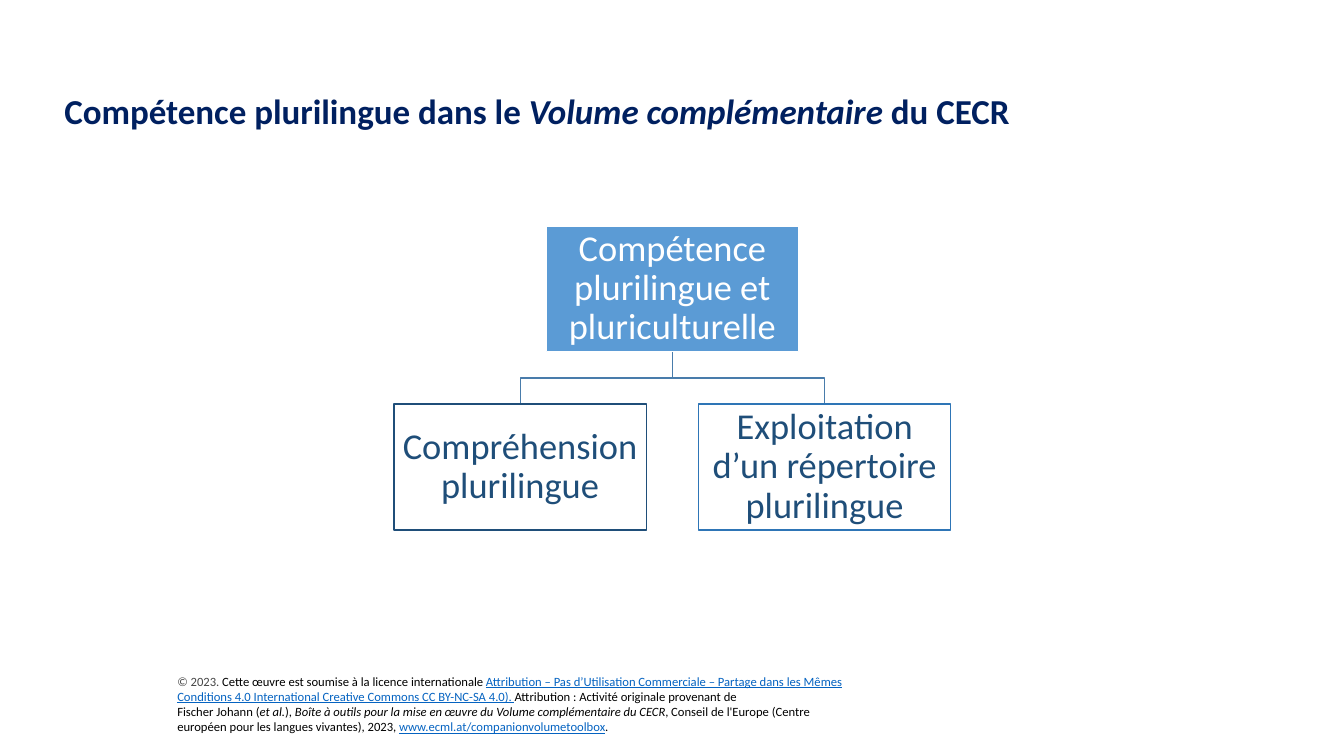
from dataclasses import dataclass

from pptx import Presentation
from pptx.dml.color import RGBColor
from pptx.enum import shapes, text
from pptx.util import Inches, Pt


@dataclass(frozen=True)
class Theme:
    font: str = "Calibri"
    navy: str = "002060"
    black: str = "000000"
    grey: str = "464646"
    link: str = "0563C1"
    white: str = "FFFFFF"
    blue: str = "5B9BD5"
    mid_blue: str = "2E75B6"
    dark_blue: str = "1F4E79"
    branch: str = "497CAB"
    title_size: int = 25
    box_size: int = 26
    licence_size: int = 9


THEME = Theme()
BOX_W, BOX_H = 2.5, 1.25
ROOT_X, ROOT_Y = 5.42, 2.24
CHILD_Y = 4.01
CENTRE_X = ROOT_X + BOX_W / 2
CHILD_OFFSET = 1.51

CHILDREN = [
    (-CHILD_OFFSET, "Compréhension plurilingue", THEME.dark_blue),
    (CHILD_OFFSET, "Exploitation d’un répertoire plurilingue", THEME.mid_blue),
]

TITLE = [[
    ("Compétence plurilingue dans le ", THEME.navy, False),
    ("Volume complémentaire", THEME.navy, True),
    (" du CECR", THEME.navy, False),
]]

LICENCE = [
    [
        ("© 2023. ", THEME.grey, False),
        ("Cette œuvre est soumise à la licence internationale ", THEME.black, False),
        ("Attribution – Pas d’Utilisation Commerciale – Partage dans les Mêmes "
         "Conditions 4.0 International Creative Commons CC BY-NC-SA 4.0). ", THEME.link, False),
        ("Attribution : Activité originale provenant de", THEME.black, False),
    ],
    [
        ("Fischer Johann (", THEME.black, False),
        ("et al.", THEME.black, True),
        ("), ", THEME.black, False),
        ("Boîte à outils pour la mise en œuvre du Volume complémentaire du CECR",
         THEME.black, True),
        (", Conseil de l'Europe (Centre européen pour les langues vivantes), 2023, ",
         THEME.black, False),
        ("www.ecml.at/companionvolumetoolbox", THEME.link, False),
        (".", THEME.black, False),
    ],
]


def rgb(colour):
    return RGBColor.from_string(colour)


def style_font(font, size, colour):
    font.name = THEME.font
    font.size = Pt(size)
    font.color.rgb = rgb(colour)


def add_rich_text(s, left, top, width, height, paragraphs, size, bold=False, spacing=1.0):
    """Add a text box from paragraphs of (text, colour, italic) runs."""
    tf = s.shapes.add_textbox(
        Inches(left), Inches(top), Inches(width), Inches(height)).text_frame
    tf.word_wrap = True
    tf.vertical_anchor = text.MSO_ANCHOR.MIDDLE
    for i, runs in enumerate(paragraphs):
        p = tf.add_paragraph() if i else tf.paragraphs[0]
        p.line_spacing = spacing
        for words, colour, italic in runs:
            r = p.add_run()
            r.text = words
            style_font(r.font, size, colour)
            r.font.bold = bold
            r.font.italic = italic
            r.font.underline = colour == THEME.link


def add_branch(s, child_x):
    """Draw the elbow from the root box down to a child box."""
    root_bottom = ROOT_Y + BOX_H
    middle = (root_bottom + CHILD_Y) / 2
    builder = s.shapes.build_freeform(Inches(CENTRE_X), Inches(root_bottom))
    corners = [(CENTRE_X, middle), (child_x, middle), (child_x, CHILD_Y)]
    builder.add_line_segments([(Inches(x), Inches(y)) for x, y in corners], close=False)
    sp = builder.convert_to_shape()
    sp.shadow.inherit = False
    sp.fill.background()
    sp.line.color.rgb = rgb(THEME.branch)
    sp.line.width = Pt(1)


def add_box(s, left, top, words, line, colour, fill=None):
    sp = s.shapes.add_shape(shapes.MSO_SHAPE.RECTANGLE, Inches(left), Inches(top),
                            Inches(BOX_W), Inches(BOX_H))
    sp.shadow.inherit = False
    if fill:
        sp.fill.solid()
        sp.fill.fore_color.rgb = rgb(fill)
    else:
        sp.fill.background()
    sp.line.color.rgb = rgb(line)
    sp.line.width = Pt(1)
    tf = sp.text_frame
    tf.word_wrap = True
    tf.vertical_anchor = text.MSO_ANCHOR.MIDDLE
    tf.margin_left = tf.margin_right = tf.margin_top = tf.margin_bottom = Inches(0.02)
    tf.text = words
    p = tf.paragraphs[0]
    p.alignment = text.PP_ALIGN.CENTER
    p.line_spacing = 0.9
    style_font(p.runs[0].font, THEME.box_size, colour)


def main():
    prs = Presentation()
    prs.slide_width, prs.slide_height = Inches(13.33), Inches(7.5)
    s = prs.slides.add_slide(prs.slide_layouts[6])

    add_rich_text(s, 1.66, 6.63, 6.85, 0.71, LICENCE, THEME.licence_size)
    add_rich_text(s, 0.54, 0.4, 12.27, 1.45, TITLE, THEME.title_size, bold=True, spacing=0.9)
    for offset, _, _ in CHILDREN:
        add_branch(s, CENTRE_X + offset)
    add_box(s, ROOT_X, ROOT_Y, "Compétence plurilingue et pluriculturelle",
            THEME.white, THEME.white, THEME.blue)
    for offset, words, line in CHILDREN:
        add_box(s, ROOT_X + offset, CHILD_Y, words, line, THEME.dark_blue)

    prs.save("out.pptx")


if __name__ == "__main__":
    main()
